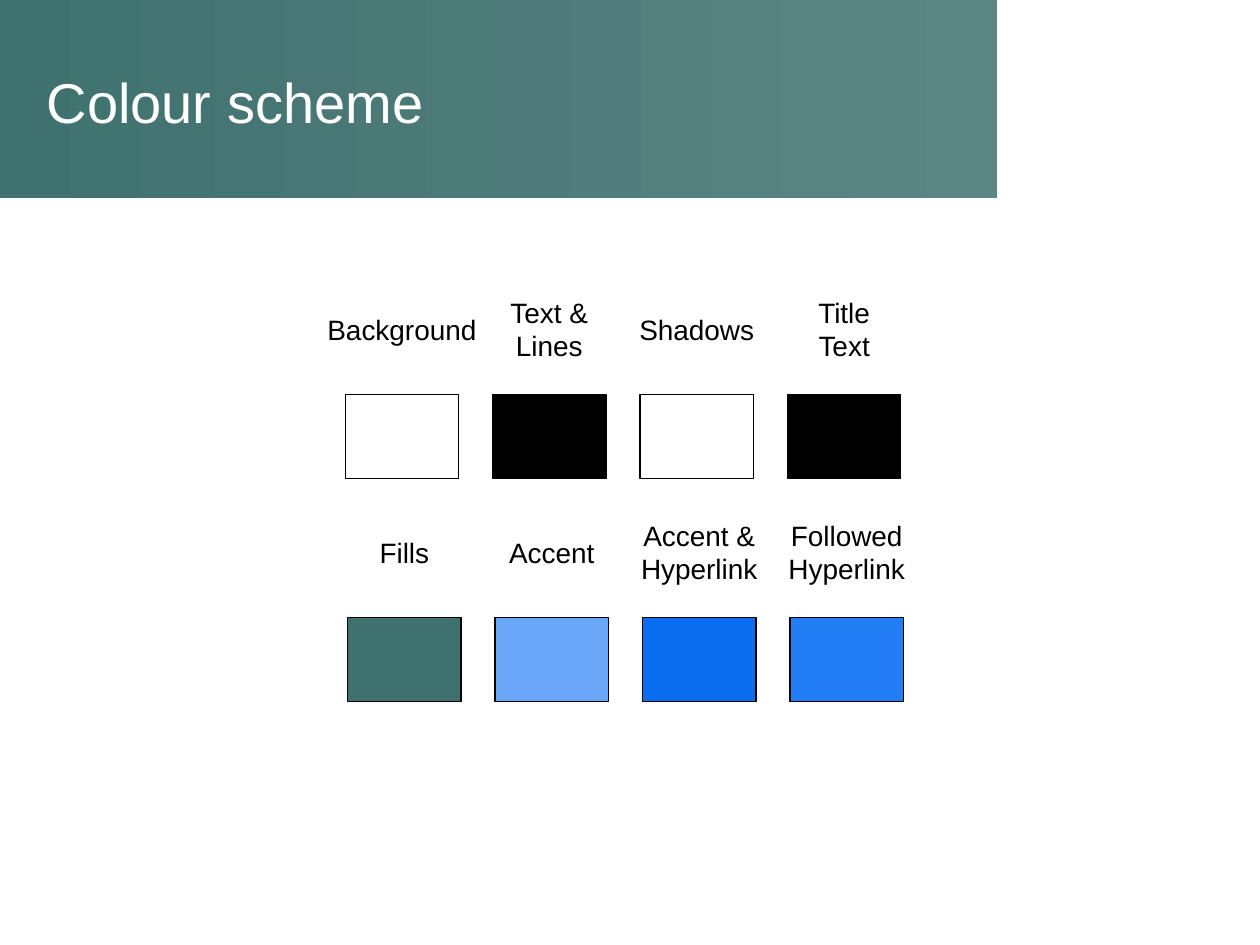
from pptx import Presentation
from pptx.dml.color import RGBColor
from pptx.enum.shapes import MSO_SHAPE as Shape
from pptx.enum.text import MSO_ANCHOR as Anchor, PP_ALIGN as Align
from pptx.util import Inches, Pt

COLOURS = {
    "background": "FFFFFF", "text": "000000", "shadow": "FFFFFF",
    "title": "000000", "fill": "3F716E", "accent": "6BA7F8",
    "hyperlink": "0B6DEF", "followed": "237DF5",
    "heading": "FFFFFF", "band_end": "5C8684",
}

# Swatch grid, in inches
PITCH = 1.17
SWATCH_WIDTH, SWATCH_HEIGHT = 0.9, 0.67
LABEL_WIDTH = 1.4  # holds the longest label on one line
LABEL_RISE = 0.52  # from the middle of a label down to its swatch
LABEL_INSET, LINE_HEIGHT = 0.1, 0.27

# Each row: left edge, top of the swatches, (label, colour) pairs.
# "\n" starts a paragraph and "\v" a line within one.
PALETTE_ROWS = [
    (2.74, 3.13, [("Background", "background"), ("Text &\nLines", "text"),
                  ("Shadows", "shadow"), ("Title\vText", "title")]),
    (2.76, 4.9, [("Fills", "fill"), ("Accent", "accent"),
                 ("Accent &\nHyperlink", "hyperlink"),
                 ("Followed\nHyperlink", "followed")]),
]


def colour(name):
    return RGBColor.from_string(COLOURS[name])


class PaletteSlide:
    font_name = "Arial"

    def __init__(self, presentation):
        self.slide = presentation.slides.add_slide(presentation.slide_layouts[5])
        self.shapes = self.slide.shapes

    def style(self, paragraph, size, colour_name, align):
        paragraph.alignment = align
        paragraph.font.name = self.font_name
        paragraph.font.size = Pt(size)
        paragraph.font.color.rgb = colour(colour_name)

    def rectangle(self, *box):
        shape = self.shapes.add_shape(Shape.RECTANGLE, *map(Inches, box))
        shape.shadow.inherit = False
        return shape

    def band(self, *box):
        band = self.rectangle(*box)
        band.line.fill.background()
        band.fill.gradient()
        band.fill.gradient_angle = 0
        for stop, name in zip(band.fill.gradient_stops, ("fill", "band_end")):
            stop.color.rgb = colour(name)
        # Send the band behind the title
        self.shapes._spTree.insert(2, band._element)

    def title(self, text, *box):
        title = self.shapes.title
        title.left, title.top, title.width, title.height = map(Inches, box)
        title.text_frame.text = text
        title.text_frame.vertical_anchor = Anchor.MIDDLE
        self.style(title.text_frame.paragraphs[0], 32, "heading", Align.LEFT)

    def swatch(self, left, top, colour_name):
        swatch = self.rectangle(left, top, SWATCH_WIDTH, SWATCH_HEIGHT)
        swatch.fill.solid()
        swatch.fill.fore_color.rgb = colour(colour_name)
        swatch.line.color.rgb = colour("text")
        swatch.line.width = Pt(0.75)

    def label(self, text, centre, middle):
        height = LABEL_INSET + LINE_HEIGHT * len(text.splitlines())
        box = (centre - LABEL_WIDTH / 2, middle - height / 2, LABEL_WIDTH, height)
        frame = self.shapes.add_textbox(*map(Inches, box)).text_frame
        frame.word_wrap = False
        frame.vertical_anchor = Anchor.MIDDLE
        frame.text = text
        for paragraph in frame.paragraphs:
            self.style(paragraph, 16, "text", Align.CENTER)


def main():
    presentation = Presentation()
    presentation.slide_width = Inches(10)
    presentation.slide_height = Inches(7.5)
    page = PaletteSlide(presentation)

    # Heading
    page.band(0, 0, 7.91, 1.57)
    page.title("Colour scheme", 0.27, 0.3, 7.48, 1.01)

    # Labelled swatches
    for row_left, top, entries in PALETTE_ROWS:
        for column, (text, colour_name) in enumerate(entries):
            left = row_left + column * PITCH
            page.swatch(left, top, colour_name)
            page.label(text, left + SWATCH_WIDTH / 2, top - LABEL_RISE)

    presentation.save("out.pptx")


if __name__ == "__main__":
    main()
